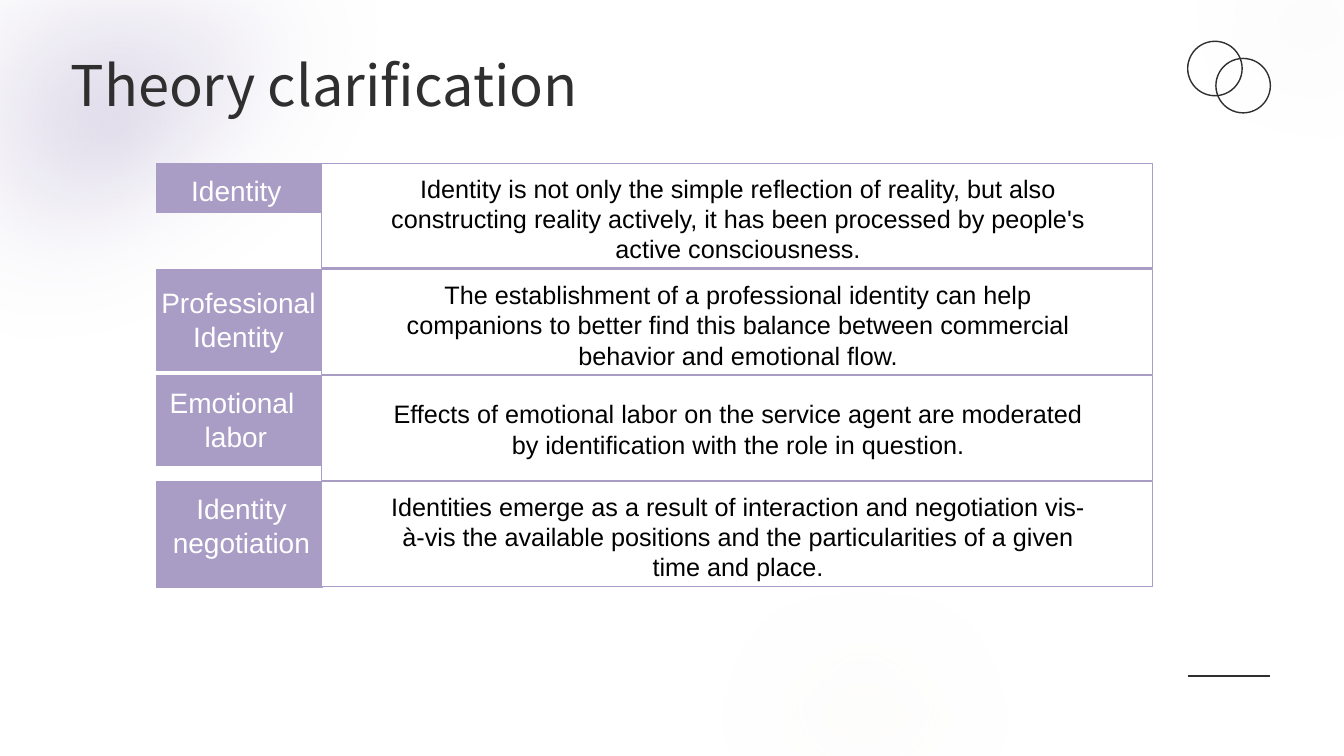
from dataclasses import dataclass

from lxml import etree
from pptx import Presentation
from pptx import util as u
from pptx.dml.color import RGBColor
from pptx.enum import shapes, text
from pptx.oxml.ns import qn

COLORS = {
    "lilac": "A99DC6",
    "sand": "E3D5C4",
    "ink": "2F2F2F",
    "white": "FFFFFF",
    "black": "000000",
}
FORMATS = {
    "title": {"name": "Noto Sans CJK SC", "size": u.Pt(40), "bold": False},
    "label": {"name": "Arial", "size": u.Pt(20)},
    "definition": {"name": "Arial", "size": u.Pt(18)},
}
FIRST_ROW, LAST_ROW, ROW_HEIGHT = 1.62, 4.78, 1.04
LABEL_LEFT, LABEL_WIDTH = 1.55, 1.65
DEFINITION_LEFT, DEFINITION_WIDTH = 3.19, 8.24


@dataclass
class Box:
    left: float
    top: float
    width: float
    height: float

    def emu(self) -> list[int]:
        return [u.Inches(v) for v in (self.left, self.top, self.width, self.height)]


@dataclass
class Glow:
    color: str
    start: tuple[float, float]
    segments: list[tuple[float, ...]]


@dataclass
class Theory:
    label: list[str]
    label_height: float
    label_text: Box
    definition: str
    text_offset: float = 0.05
    text_height: float = 1.01


GLOWS = [
    Glow("lilac", (10.71, -1.43), [
        (14.69, -1.43), (14.69, 2.27), (14.58, 2.31),
        (14.29, 2.4, 13.98, 2.45, 13.66, 2.45),
        (11.97, 2.45, 10.6, 1.08, 10.6, -0.62),
        (10.6, -0.83, 10.62, -1.03, 10.66, -1.23)]),
    Glow("lilac", (-1.46, -1.32), [
        (4.77, -1.32), (4.79, -1.25),
        (4.82, -1.03, 4.84, -0.8, 4.84, -0.56),
        (4.84, 1.95, 2.8, 3.98, 0.29, 3.98),
        (-0.73, 3.98, -1.67, 3.65, -2.42, 3.08),
        (-2.44, 3.07), (-1.46, 3.07)]),
    Glow("sand", (8.58, 5.34), [
        (10.79, 5.34, 12.7, 6.67, 13.54, 8.56),
        (13.55, 8.6), (3.62, 8.6), (3.63, 8.56),
        (4.47, 6.67, 6.38, 5.34, 8.58, 5.34)]),
]
RINGS = [Box(11.78, 0.41, 0.54, 0.54), Box(12.06, 0.58, 0.54, 0.54)]
THEORIES = [
    Theory(["Identity"], 0.49, Box(1.6, 0.05, 1.49, 0.44),
           "Identity is not only the simple reflection of reality, but also "
           "constructing reality actively, it has been processed by people's "
           "active consciousness."),
    Theory(["Professional", "Identity"], 1, Box(1.44, 0.11, 1.85, 0.77),
           "The establishment of a professional identity can help companions "
           "to better find this balance between commercial behavior and "
           "emotional flow."),
    Theory(["Emotional ", "labor"], 0.89, Box(1.55, 0.05, 1.58, 0.77),
           "Effects of emotional labor on the service agent are moderated by "
           "identification with the role in question.", 0.18, 0.71),
    Theory(["Identity", "negotiation"], 1.05, Box(1.49, 0.05, 1.81, 0.77),
           "Identities emerge as a result of interaction and negotiation "
           "vis-à-vis the available positions and the particularities of a "
           "given time and place.", 0.04),
]


def rgb(name: str) -> RGBColor:
    return RGBColor.from_string(COLORS[name])


def write(tf, lines: list[str], style: str, color: str, align) -> None:
    tf.word_wrap = True
    for i, line in enumerate(lines):
        p = tf.paragraphs[0] if i == 0 else tf.add_paragraph()
        p.alignment = align
        r = p.add_run()
        r.text = line
        for key, value in FORMATS[style].items():
            setattr(r.font, key, value)
        r.font.color.rgb = rgb(color)


def add_text(s, box: Box, lines: list[str], style: str, color: str) -> None:
    tf = s.shapes.add_textbox(*box.emu()).text_frame
    write(tf, lines, style, color, text.PP_ALIGN.CENTER)
    tf.auto_size = text.MSO_AUTO_SIZE.SHAPE_TO_FIT_TEXT


def add_preset(parent, kind, box: Box, fill: str | None, line: str) -> None:
    sp = parent.shapes.add_shape(kind, *box.emu())
    sp.shadow.inherit = False
    if fill:
        sp.fill.solid()
        sp.fill.fore_color.rgb = rgb(fill)
    else:
        sp.fill.background()
    sp.line.color.rgb = rgb(line)
    sp.line.width = u.Pt(1)


def bend_segments(sp, segments: list[tuple[float, ...]]) -> None:
    lines = list(sp._element.spPr.iter(qn("a:lnTo")))
    for line, segment in zip(lines, segments):
        if len(segment) == 2:
            continue
        curve = etree.Element(qn("a:cubicBezTo"))
        for x, y in zip(segment[::2], segment[1::2]):
            etree.SubElement(curve, qn("a:pt"), x=str(u.Inches(x) - sp.left),
                             y=str(u.Inches(y) - sp.top))
        line.getparent().replace(line, curve)


def fade(sp, color: str) -> None:
    sp.fill.gradient()
    spPr = sp._element.spPr
    grad = spPr.find(qn("a:gradFill"))
    for child in list(grad):
        grad.remove(child)
    stops = etree.SubElement(grad, qn("a:gsLst"))
    for position, alpha in ((0, 40000), (100000, 0)):
        stop = etree.SubElement(stops, qn("a:gs"), pos=str(position))
        tint = etree.SubElement(stop, qn("a:srgbClr"), val=COLORS[color])
        etree.SubElement(tint, qn("a:alpha"), val=str(alpha))
    circle = etree.SubElement(grad, qn("a:path"), path="circle")
    etree.SubElement(circle, qn("a:fillToRect"), dict.fromkeys("ltrb", "50000"))
    sp.shadow.inherit = False
    etree.SubElement(spPr.find(qn("a:effectLst")), qn("a:softEdge"),
                     rad=str(u.Pt(100)))


def add_glow(s, glow: Glow) -> None:
    builder = s.shapes.build_freeform(*[u.Inches(v) for v in glow.start])
    ends = [(u.Inches(seg[-2]), u.Inches(seg[-1])) for seg in glow.segments]
    builder.add_line_segments(ends, close=True)
    sp = builder.convert_to_shape()
    sp.line.fill.background()
    bend_segments(sp, glow.segments)
    fade(sp, glow.color)


def add_rule(s) -> None:
    ends = [u.Inches(v) for v in (11.78, 6.71, 12.6, 6.71)]
    line = s.shapes.add_connector(shapes.MSO_CONNECTOR.STRAIGHT, *ends)
    line.line.color.rgb = rgb("ink")
    line.line.width = u.Pt(1.5)
    etree.SubElement(line._element.spPr, qn("a:effectLst"))


def add_title(s) -> None:
    title = s.shapes.title
    place = zip(("left", "top", "width", "height"), Box(0.6, 0.45, 5.54, 0.77).emu())
    for key, value in place:
        setattr(title, key, value)
    tf = title.text_frame
    write(tf, ["Theory clarification"], "title", "ink", text.PP_ALIGN.LEFT)
    tf.vertical_anchor = text.MSO_ANCHOR.MIDDLE
    tf.auto_size = text.MSO_AUTO_SIZE.SHAPE_TO_FIT_TEXT
    title._element.getparent().append(title._element)


def add_theory(s, theory: Theory, top: float) -> None:
    rect = shapes.MSO_SHAPE.RECTANGLE
    add_preset(s, rect, Box(LABEL_LEFT, top, LABEL_WIDTH, theory.label_height),
               "lilac", "lilac")
    t = theory.label_text
    add_text(s, Box(t.left, top + t.top, t.width, t.height),
             theory.label, "label", "white")
    add_preset(s, rect, Box(DEFINITION_LEFT, top, DEFINITION_WIDTH, ROW_HEIGHT),
               "white", "lilac")
    add_text(s, Box(3.74, top + theory.text_offset, 7.16, theory.text_height),
             [theory.definition], "definition", "black")


def main() -> None:
    prs = Presentation()
    prs.slide_width, prs.slide_height = u.Inches(13.33), u.Inches(7.5)
    s = prs.slides.add_slide(prs.slide_layouts[5])
    s.background.fill.solid()
    s.background.fill.fore_color.rgb = rgb("white")
    for glow in GLOWS:
        add_glow(s, glow)
    rings = s.shapes.add_group_shape()
    for ring in RINGS:
        add_preset(rings, shapes.MSO_SHAPE.OVAL, ring, None, "ink")
    add_rule(s)
    add_title(s)
    pitch = (LAST_ROW - FIRST_ROW) / (len(THEORIES) - 1)
    for i, theory in enumerate(THEORIES):
        add_theory(s, theory, FIRST_ROW + i * pitch)
    prs.save("out.pptx")


if __name__ == "__main__":
    main()
